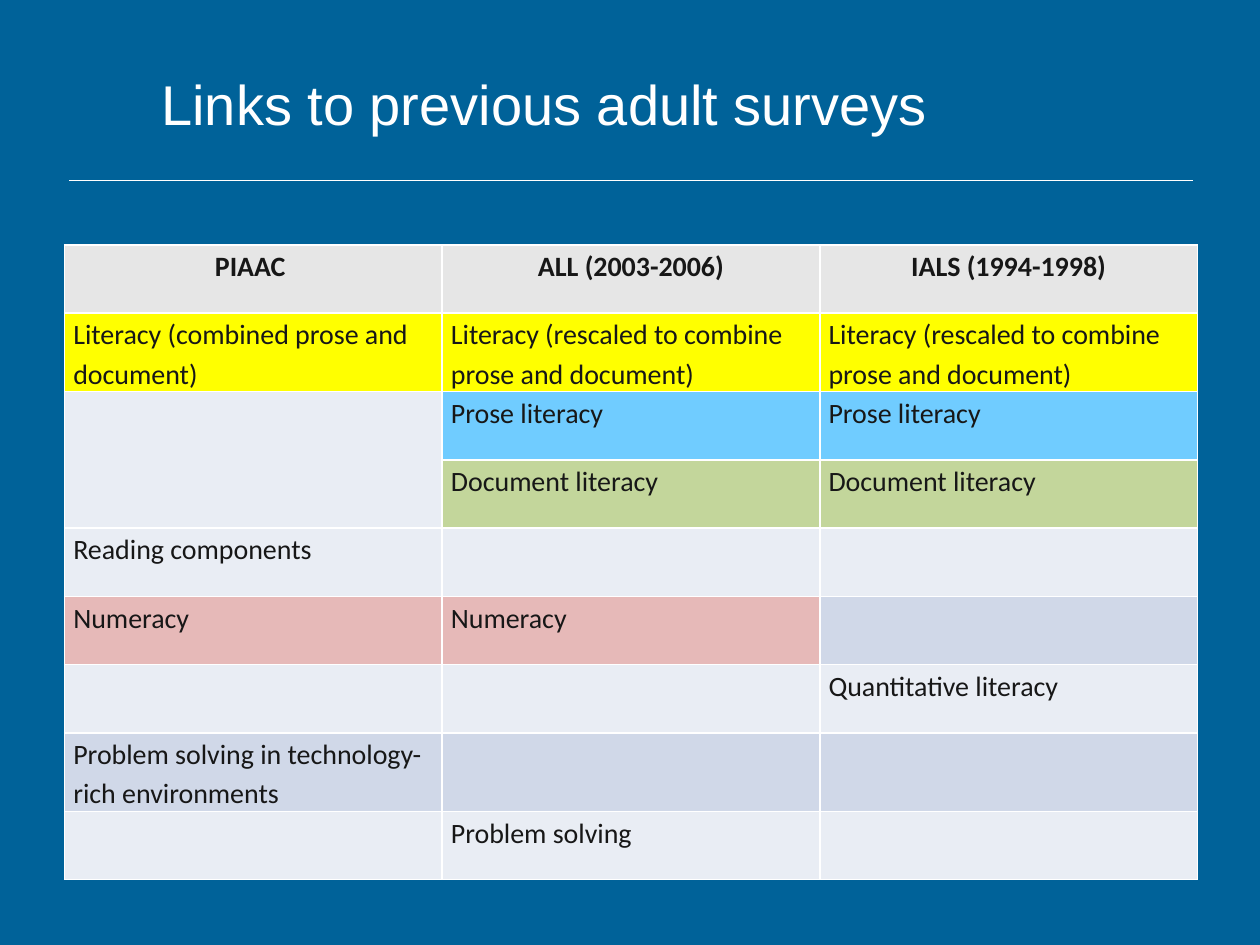
"""Build the slide that links PIAAC to the previous adult surveys."""
from lxml import etree
from pptx import Presentation
from pptx import util as u
from pptx.dml.color import RGBColor
from pptx.enum import shapes, text
from pptx.oxml.ns import qn

COLORS = {
    "background": "006299", "white": "FFFFFF", "ink": "171717",
    "header": "E6E6E6", "literacy": "FFFF00", "prose": "70CCFF",
    "document": "C3D69B", "numeracy": "E6B9B8",
    "light": "E9EDF4", "dark": "D0D8E8",
}
TITLE = "Links to previous adult surveys"
RESCALED = "Literacy (rescaled to combine prose and document)"
ROWS = [
    [("PIAAC ", "header"), ("ALL (2003-2006)", "header"), ("IALS (1994-1998)", "header")],
    [("Literacy (combined prose and document)", "literacy"), (RESCALED, "literacy"), (RESCALED, "literacy")],
    [("", "light"), ("Prose literacy", "prose"), ("Prose literacy", "prose")],
    [("", "light"), ("Document literacy", "document"), ("Document literacy", "document")],
    [("Reading components", "light"), ("", "light"), ("", "light")],
    [("Numeracy", "numeracy"), ("Numeracy", "numeracy"), ("", "dark")],
    [("", "light"), ("", "light"), ("Quantitative literacy", "light")],
    [("Problem solving in technology-rich environments", "dark"), ("", "dark"), ("", "dark")],
    [("", "light"), ("Problem solving", "light"), ("", "light")],
]
TABLE_LEFT, TABLE_TOP, TABLE_WIDTH, ROW_HEIGHT = 36.9, 139.9, 647.4, 39


def color(name):
    return RGBColor.from_string(COLORS[name])


def write(frame, words, font="Calibri", size=16, ink="ink", bold=False,
          align=text.PP_ALIGN.LEFT, spacing=1.15, after=10):
    para = frame.paragraphs[0]
    para.alignment, para.line_spacing = align, spacing
    para.space_before, para.space_after = u.Pt(0), u.Pt(after)
    span = para.add_run()
    span.text = words
    span.font.name, span.font.size, span.font.bold = font, u.Pt(size), bold
    span.font.color.rgb = color(ink)


def add_borders(cell, width=1):
    properties = cell._tc.get_or_add_tcPr()
    for index, side in enumerate(("lnL", "lnR", "lnT", "lnB")):
        line = etree.Element(qn(f"a:{side}"), w=str(u.Pt(width)))
        fill = etree.SubElement(line, qn("a:solidFill"))
        etree.SubElement(fill, qn("a:srgbClr"), val=COLORS["white"])
        properties.insert(index, line)


def add_title(page):
    box = page.shapes.title
    box.left, box.top, box.width, box.height = (u.Pt(n) for n in (85, 18.7, 583.9, 80.6))
    box.text_frame.vertical_anchor = text.MSO_ANCHOR.MIDDLE
    write(box.text_frame, TITLE, font="Arial", size=32, ink="white", spacing=1, after=0)


def add_rule(page):
    rule = page.shapes.add_connector(
        shapes.MSO_CONNECTOR.STRAIGHT, u.Pt(39.5), u.Pt(103), u.Pt(681.7), u.Pt(103))
    rule.line.color.rgb = color("white")
    rule.line.width = u.Pt(0.5)
    etree.SubElement(rule._element.spPr, qn("a:effectLst"))


def add_surveys(page):
    table = page.shapes.add_table(
        len(ROWS), len(ROWS[0]), u.Pt(TABLE_LEFT), u.Pt(TABLE_TOP),
        u.Pt(TABLE_WIDTH), u.Pt(ROW_HEIGHT * len(ROWS))).table
    for r, row in enumerate(ROWS):
        for c, (words, fill) in enumerate(row):
            cell = table.cell(r, c)
            cell.margin_left = cell.margin_right = u.Pt(5)
            cell.margin_top = cell.margin_bottom = u.Pt(0)
            cell.fill.solid()
            cell.fill.fore_color.rgb = color(fill)
            add_borders(cell)
            if words:
                header = r == 0
                align = text.PP_ALIGN.CENTER if header else text.PP_ALIGN.LEFT
                write(cell.text_frame, words, bold=header, align=align)
    table.cell(2, 0).merge(table.cell(3, 0))


def main():
    deck = Presentation()
    deck.slide_width, deck.slide_height = u.Pt(720), u.Pt(540)
    page = deck.slides.add_slide(deck.slide_layouts[5])
    page.background.fill.solid()
    page.background.fill.fore_color.rgb = color("background")
    add_rule(page)
    add_title(page)
    add_surveys(page)
    deck.save("out.pptx")


if __name__ == "__main__":
    main()
